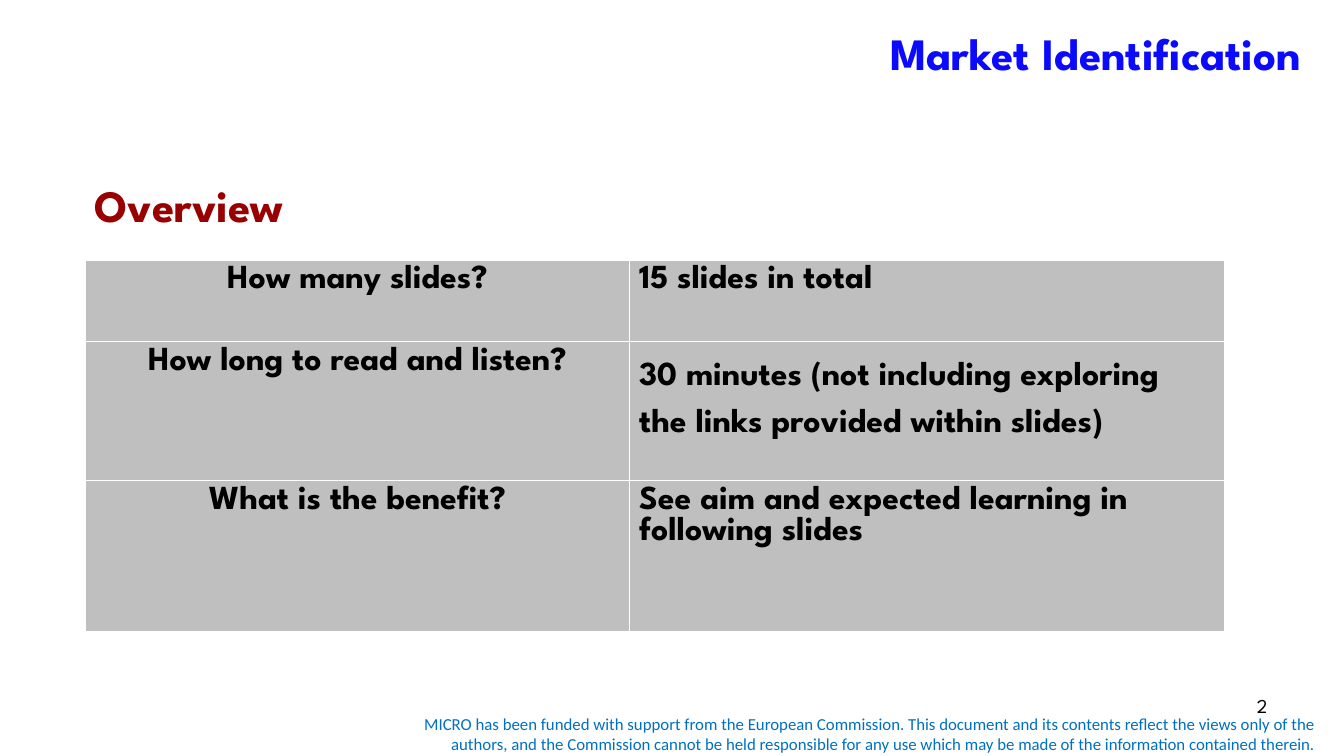
from lxml import etree
from pptx import Presentation
from pptx.dml.color import RGBColor
from pptx.enum.text import MSO_ANCHOR, MSO_AUTO_SIZE, PP_ALIGN
from pptx.oxml.ns import qn
from pptx.util import Inches, Pt

LEFT, CENTER, RIGHT = PP_ALIGN.LEFT, PP_ALIGN.CENTER, PP_ALIGN.RIGHT
TOP, MIDDLE = MSO_ANCHOR.TOP, MSO_ANCHOR.MIDDLE
NO_AUTOFIT = MSO_AUTO_SIZE.NONE

BLUE = RGBColor(0x0B, 0x0A, 0xFD)
FOOTER_BLUE = RGBColor(0x00, 0x70, 0xC0)
DARK_RED = RGBColor(0x99, 0x00, 0x00)
BLACK = RGBColor(0x00, 0x00, 0x00)
GRAY = RGBColor(0xBF, 0xBF, 0xBF)
BORDER_HEX = "FFFFFF"

HEADING_FONT = "League Spartan"
FOOTER_FONT = "Calibri"
TITLE_ONLY = 5

FUNDING_NOTE = (
    "MICRO has been funded with support from the European Commission. "
    "This document and its contents reflect the views only of the authors, "
    "and the Commission cannot be held responsible for any use which may be "
    "made of the information contained therein."
)
COLUMN_WIDTHS = (5.39, 5.91)
OVERVIEW_ROWS = (
    (0.81, "How many slides?", "15 slides in total", 1),
    (1.38, "How long to read and listen?",
     "30 minutes (not including exploring the links provided within slides)", 1.5),
    (1.5, "What is the benefit?",
     "See aim and expected learning in following slides", 1),
)


def write(frame, text, size, color, align=LEFT, bold=False, font=HEADING_FONT):
    para = frame.paragraphs[0]
    para.alignment = align
    span = para.add_run()
    span.text = text
    span.font.name = font
    span.font.size = Pt(size)
    span.font.bold = bold
    span.font.color.rgb = color
    return para


def place(shape, box):
    shape.left, shape.top, shape.width, shape.height = map(Inches, box)


def add_title(slide, box):
    title = slide.shapes.title
    place(title, box)
    frame = title.text_frame
    frame.auto_size = NO_AUTOFIT
    frame.vertical_anchor = MIDDLE
    frame.margin_right = Inches(0.23)
    frame.margin_bottom = Inches(0.25)
    write(frame, "Market Identification", 32, BLUE, RIGHT, True)


def add_label(slide, box, text, size, color, anchor=TOP, **style):
    label = slide.shapes.add_textbox(*map(Inches, box))
    frame = label.text_frame
    frame.word_wrap = True
    frame.vertical_anchor = anchor
    write(frame, text, size, color, **style)


def set_borders(cell):
    properties = cell._tc.get_or_add_tcPr()
    for side in ("a:lnL", "a:lnR", "a:lnT", "a:lnB"):
        line = etree.SubElement(properties, qn(side), w=str(Pt(1)))
        fill = etree.SubElement(line, qn("a:solidFill"))
        etree.SubElement(fill, qn("a:srgbClr"), val=BORDER_HEX)


def add_overview_table(slide, box):
    frame = slide.shapes.add_table(
        len(OVERVIEW_ROWS), len(COLUMN_WIDTHS), *map(Inches, box))
    table = frame.table
    table.first_row = table.horz_banding = False
    for column, width in zip(table.columns, COLUMN_WIDTHS):
        column.width = Inches(width)
    for row, (height, question, answer, spacing) in zip(table.rows, OVERVIEW_ROWS):
        row.height = Inches(height)
        for cell, text, align in zip(row.cells, (question, answer), (CENTER, LEFT)):
            set_borders(cell)
            cell.fill.solid()
            cell.fill.fore_color.rgb = GRAY
            para = write(cell.text_frame, text, 24, BLACK, align, True)
            if align == LEFT:
                para.line_spacing = float(spacing)


def add_footer(slide, box):
    left, top, width, height = box
    add_label(slide, box, FUNDING_NOTE, 12, FOOTER_BLUE, MIDDLE,
              align=RIGHT, font=FOOTER_FONT)
    add_label(slide, (left + width - 3.59, top - 0.2, 3.11, 0.52),
              "2", 14, BLACK, align=RIGHT)


def build_overview_slide(deck):
    slide = deck.slides.add_slide(deck.slide_layouts[TITLE_ONLY])
    add_title(slide, (1.14, 0, 12, 1.25))
    add_label(slide, (0.84, 1.71, 2.9, 0.64), "Overview", 32, DARK_RED, bold=True)
    add_overview_table(slide, (0.85, 2.58, 11.3, 3.69))
    add_footer(slide, (3.75, 7.03, 9.4, 0.5))


def main():
    deck = Presentation()
    deck.slide_width = Inches(13.33)
    deck.slide_height = Inches(7.5)
    build_overview_slide(deck)
    deck.save("out.pptx")


if __name__ == "__main__":
    main()
